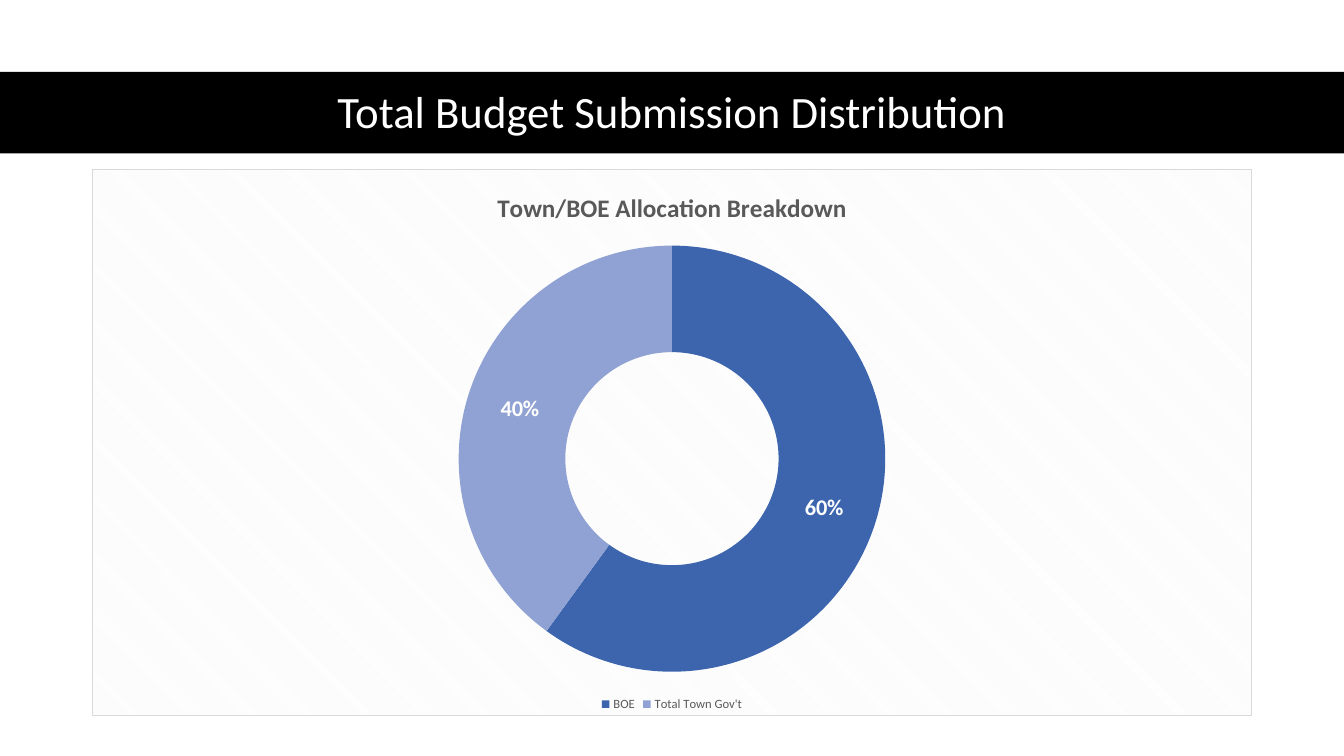
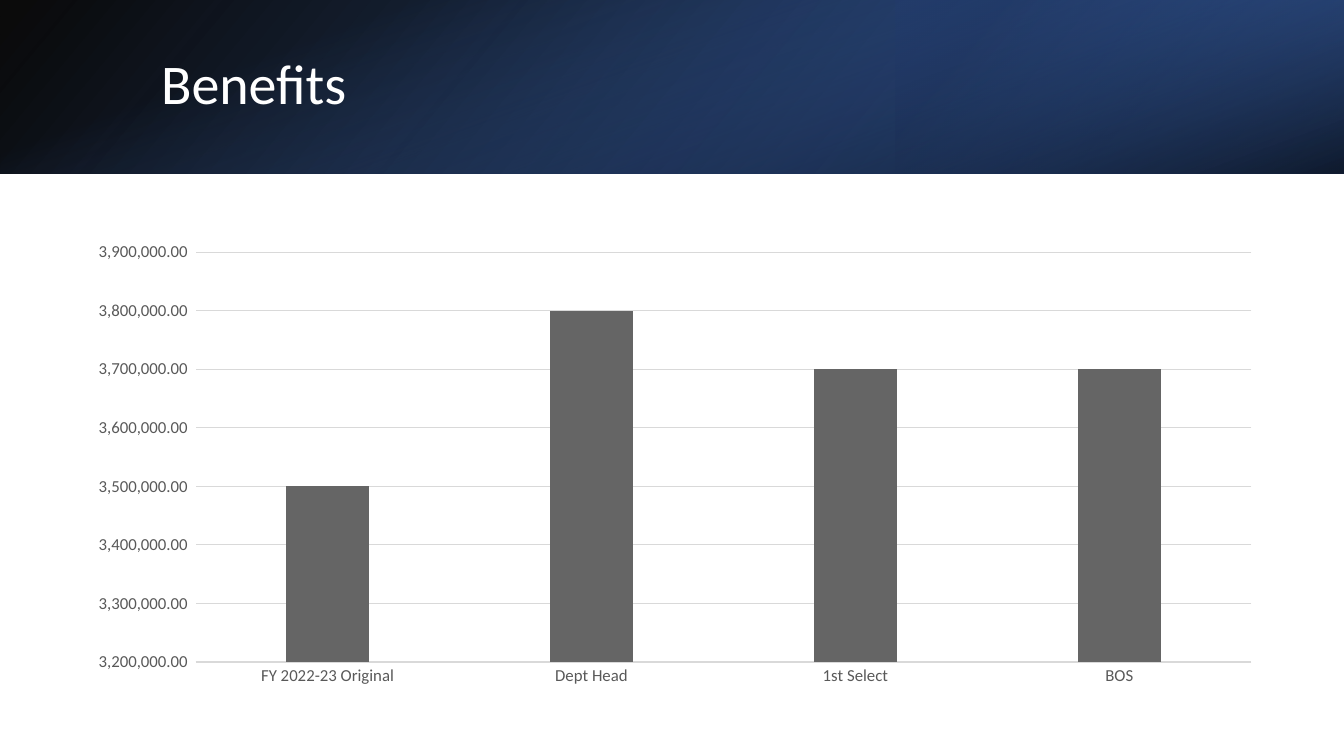
"""Build two budget slides: a doughnut of the submission split and a benefits column chart."""
from dataclasses import dataclass
from typing import NamedTuple, Optional

from lxml import etree
from pptx import Presentation
from pptx.chart.data import CategoryChartData
from pptx.dml.color import RGBColor
from pptx.enum.chart import XL_CHART_TYPE, XL_LEGEND_POSITION, XL_TICK_MARK
from pptx.enum.shapes import MSO_SHAPE
from pptx.enum.text import MSO_ANCHOR, PP_ALIGN
from pptx.oxml import parse_xml
from pptx.oxml.ns import nsdecls, qn
from pptx.util import Pt

DOUGHNUT = XL_CHART_TYPE.DOUGHNUT
COLUMN = XL_CHART_TYPE.COLUMN_CLUSTERED
BOTTOM = XL_LEGEND_POSITION.BOTTOM
NO_TICK = XL_TICK_MARK.NONE
RECT = MSO_SHAPE.RECTANGLE
MIDDLE = MSO_ANCHOR.MIDDLE
LEFT, CENTER = PP_ALIGN.LEFT, PP_ALIGN.CENTER
ACCOUNTING = '_(* #,##0.00_);_(* \\(#,##0.00\\);_(* "-"??_);_(@_)'


@dataclass(frozen=True)
class Theme:
    font: str = "Calibri"
    black: str = "000000"
    white: str = "FFFFFF"
    text: str = "595959"
    rule: str = "D9D9D9"
    hatch: str = "F2F2F2"
    column: str = "656565"
    slices: tuple = ("3C65AE", "90A2D3")
    accent: str = "4472C4"
    accent_dark: str = "2F5597"
    accent_deep: str = "203864"
    title_size: float = 32
    banner_size: float = 40
    chart_title_size: float = 18
    label_size: float = 16
    axis_size: float = 12
    chart_size: float = 10
    legend_size: float = 9
    rule_width: float = 0.75


T = Theme()


class Frame(NamedTuple):
    left: float
    top: float
    width: float
    height: float

    def points(self) -> list:
        return [Pt(v) for v in self]


class Stop(NamedTuple):
    position: float
    color: str
    opacity: int = 100


@dataclass(frozen=True)
class Band:
    frame: Frame
    stops: tuple
    angle: float = 0
    rotation: float = 0
    flip: bool = False


SLIDE_W, SLIDE_H = 960, 540
BANNER_H = 124
BANNER = (
    Band(Frame(0, 0, SLIDE_W, BANNER_H),
         (Stop(0, T.black, 96), Stop(1, T.accent_dark)), 140, flip=True),
    Band(Frame(SLIDE_W * 2 / 3, 0, SLIDE_W / 3, BANNER_H),
         (Stop(0.19, T.accent_deep, 68), Stop(1, T.accent, 79)), 320, 180, True),
    Band(Frame((SLIDE_W - BANNER_H) / 2, (BANNER_H - SLIDE_W) / 2, BANNER_H, SLIDE_W),
         (Stop(0.23, T.accent, 0), Stop(0.99, T.black, 74)), 340, 90),
)
TITLE_BAR = Band(Frame(0, 51.3, SLIDE_W, 58.2), (Stop(0, T.black),))


def set_font(font, size: float, color: str, bold: Optional[bool] = None) -> None:
    for name, value in {"name": T.font, "size": Pt(size), "bold": bold}.items():
        setattr(font, name, value)
    font.color.rgb = RGBColor.from_string(color)


def set_fill(fill, color: str) -> None:
    fill.solid()
    fill.fore_color.rgb = RGBColor.from_string(color)


def set_rule(line) -> None:
    line.width = Pt(T.rule_width)
    set_fill(line.fill, T.rule)


def add_band(s, band: Band) -> None:
    sp = s.shapes.add_shape(RECT, *band.frame.points())
    sp.shadow.inherit = False
    sp.line.fill.background()
    sp.rotation = band.rotation
    if band.flip:
        sp.element.spPr.find(qn("a:xfrm")).set("flipH", "1")
    if len(band.stops) == 1:
        set_fill(sp.fill, band.stops[0].color)
        return
    sp.fill.gradient()
    sp.fill.gradient_angle = 360 - band.angle
    for target, stop in zip(sp.fill.gradient_stops, band.stops):
        target.position = stop.position
        target.color.rgb = RGBColor.from_string(stop.color)
    for clr, stop in zip(sp.element.spPr.iter(qn("a:srgbClr")), band.stops):
        etree.SubElement(clr, qn("a:alpha")).set("val", str(stop.opacity * 1000))


def add_title(s, text: str, frame: Frame, size: float, align) -> None:
    tf = s.shapes.add_textbox(*frame.points()).text_frame
    tf.word_wrap = True
    tf.vertical_anchor = MIDDLE
    p = tf.paragraphs[0]
    p.alignment = align
    p.line_spacing = 0.9
    r = p.add_run()
    r.text = text
    set_font(r.font, size, T.white)


def add_chart(s, kind, frame: Frame, values: dict, number_format: str):
    data = CategoryChartData(number_format=number_format)
    data.categories = list(values)
    data.add_series("Series 1", list(values.values()))
    chart = s.shapes.add_chart(kind, *frame.points(), data).chart
    set_font(chart.font, T.chart_size, T.black)
    chart.has_title = False
    chart.has_legend = False
    return chart


def add_hatched_panel(chart) -> None:
    panel = parse_xml(
        f'<c:spPr {nsdecls("c", "a")}><a:pattFill prst="dkDnDiag">'
        f'<a:fgClr><a:srgbClr val="{T.hatch}"/></a:fgClr>'
        f'<a:bgClr><a:srgbClr val="{T.white}"/></a:bgClr></a:pattFill>'
        f'<a:ln w="{Pt(T.rule_width)}"><a:solidFill><a:srgbClr val="{T.rule}"/>'
        '</a:solidFill></a:ln></c:spPr>')
    chart.element.find(qn("c:chart")).addnext(panel)


def add_distribution(s) -> None:
    add_band(s, TITLE_BAR)
    add_title(s, "Total Budget Submission Distribution",
              Frame(66, 53.5, 828, 56.2), T.title_size, CENTER)
    chart = add_chart(s, DOUGHNUT, Frame(66, 121, 828, 390.5),
                      {"BOE": 60, "Total Town Gov't": 40}, '"$"#,##0')
    add_hatched_panel(chart)
    chart.has_title = True
    p = chart.chart_title.text_frame.paragraphs[0]
    r = p.add_run()
    r.text = "Town/BOE Allocation Breakdown"
    set_font(r.font, T.chart_title_size, T.text, True)
    chart.chart_title.include_in_layout = False
    chart.has_legend = True
    chart.legend.position = BOTTOM
    chart.legend.include_in_layout = False
    set_font(chart.legend.font, T.legend_size, T.text)
    plot = chart.plots[0]
    plot.vary_by_categories = True
    for hole in chart.element.iter(qn("c:holeSize")):
        hole.set("val", "70")
    for i, color in enumerate(T.slices):
        fmt = plot.series[0].points[i].format
        set_fill(fmt.fill, color)
        fmt.line.fill.background()
    labels = plot.series[0].data_labels
    flags = {"show_percentage": True, "show_value": False,
             "show_category_name": False, "show_legend_key": False,
             "number_format": "0%", "number_format_is_linked": False}
    for name, value in flags.items():
        setattr(labels, name, value)
    set_font(labels.font, T.label_size, T.white, True)


def add_benefits(s) -> None:
    for band in BANNER:
        add_band(s, band)
    add_title(s, "Benefits", Frame(108, 27, 790, 69), T.banner_size, LEFT)
    values = {"FY 2022-23 Original": 3500000, "Dept Head": 3800000,
              "1st Select": 3700000, "BOS": 3700000}
    chart = add_chart(s, COLUMN, Frame(50.5, 166.3, 860.5, 330.3), values, ACCOUNTING)
    plot = chart.plots[0]
    for name, value in {"gap_width": 219, "overlap": -27, "vary_by_categories": False}.items():
        setattr(plot, name, value)
    set_fill(plot.series[0].format.fill, T.column)
    for axis in (chart.category_axis, chart.value_axis):
        axis.major_tick_mark = NO_TICK
        axis.minor_tick_mark = NO_TICK
        set_font(axis.tick_labels.font, T.axis_size, T.text)
    set_rule(chart.category_axis.format.line)
    axis = chart.value_axis
    scale = {"minimum_scale": 3200000, "maximum_scale": 3900000,
             "major_unit": 100000, "has_major_gridlines": True}
    for name, value in scale.items():
        setattr(axis, name, value)
    axis.format.line.fill.background()
    set_rule(axis.major_gridlines.format.line)
    axis.tick_labels.number_format = ACCOUNTING
    axis.tick_labels.number_format_is_linked = False


def main() -> None:
    prs = Presentation()
    prs.slide_width, prs.slide_height = Pt(SLIDE_W), Pt(SLIDE_H)
    for build in (add_distribution, add_benefits):
        build(prs.slides.add_slide(prs.slide_layouts[6]))
    prs.save("out.pptx")


if __name__ == "__main__":
    main()
